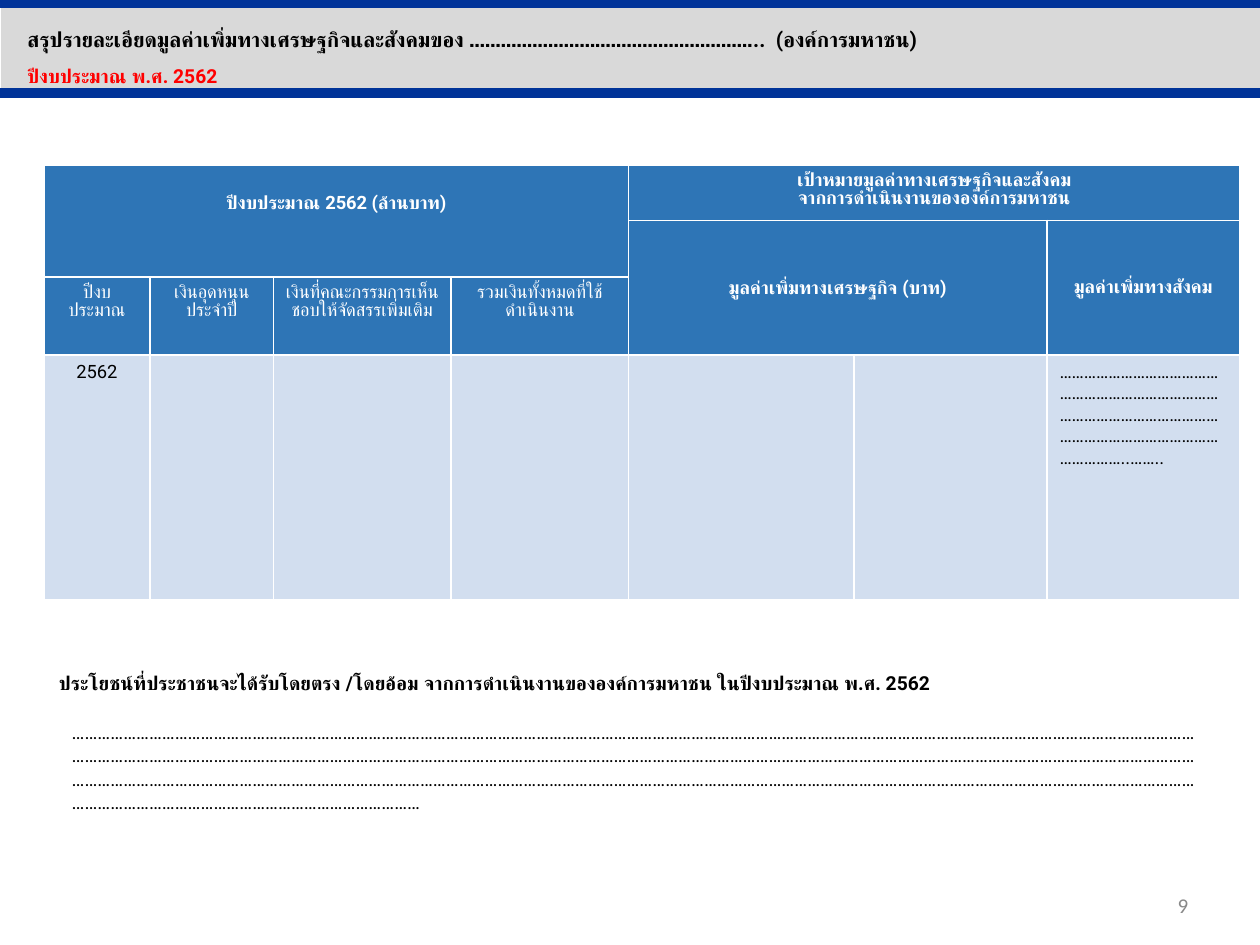
from dataclasses import dataclass
from typing import Optional

from pptx import Presentation
from pptx.dml.color import RGBColor
from pptx.enum.shapes import MSO_CONNECTOR, MSO_SHAPE
from pptx.enum.text import MSO_ANCHOR, MSO_AUTO_SIZE, PP_ALIGN
from pptx.oxml.xmlchemy import OxmlElement
from pptx.util import Inches, Pt


@dataclass(frozen=True)
class Theme:
    font: str = "Roboto"
    number_font: str = "Calibri"
    black: str = "000000"
    white: str = "FFFFFF"
    red: str = "FF0000"
    gray: str = "898989"
    band: str = "D9D9D9"
    rule: str = "003399"
    header: str = "2E75B6"
    body: str = "D2DEEF"
    title_size: float = 12
    text_size: float = 11
    table_size: float = 10.5


THEME = Theme()


@dataclass(frozen=True)
class Label:
    text: str
    left: float
    top: float
    width: float
    height: float
    size: float = THEME.text_size
    color: str = THEME.black
    bold: bool = False
    wrap: bool = False
    grow: bool = True
    font: str = THEME.font
    align: Optional[PP_ALIGN] = None
    anchor: MSO_ANCHOR = MSO_ANCHOR.TOP


@dataclass(frozen=True)
class Entry:
    row: int
    column: int
    text: str
    rows: int = 1
    columns: int = 1
    bold: bool = False
    color: str = THEME.white
    align: Optional[PP_ALIGN] = PP_ALIGN.CENTER
    anchor: MSO_ANCHOR = MSO_ANCHOR.TOP
    margin_top: float = 0.05


LABELS = [
    Label("สรุปรายละเอียดมูลค่าเพิ่มทางเศรษฐกิจและสังคมของ "
          "………………………………………………..  (องค์การมหาชน)",
          0.12, 0.16, 8.76, 0.3, size=THEME.title_size, bold=True),
    Label("ประโยชน์ที่ประชาชนจะได้รับโดยตรง /โดยอ้อม "
          "จากการดำเนินงานขององค์การมหาชน ในปีงบประมาณ พ.ศ. 2562",
          0.37, 5.28, 8.03, 0.29, bold=True),
    Label("…" * 288, 0.47, 5.67, 9.21, 0.84, wrap=True),
    Label("ปีงบประมาณ พ.ศ. 2562", 0.12, 0.46, 1.96, 0.29,
          color=THEME.red, bold=True),
    Label("9", 7.28, 6.98, 2.25, 0.4, size=THEME.title_size, color=THEME.gray,
          wrap=True, grow=False, font=THEME.number_font,
          align=PP_ALIGN.RIGHT, anchor=MSO_ANCHOR.MIDDLE),
]

COLUMN_WIDTHS = [0.84, 0.98, 1.41, 1.41, 1.79, 1.53, 1.53]
ROW_HEIGHTS = [0.44, 0.45, 0.62, 1.94]
HEADER_ROWS = 3

ENTRIES = [
    Entry(0, 0, "ปีงบประมาณ 2562 (ล้านบาท)", 2, 4, bold=True, margin_top=0.22),
    Entry(0, 4, "เป้าหมายมูลค่าทางเศรษฐกิจและสังคม\nจากการดำเนินงานขององค์การมหาชน",
          1, 3, bold=True),
    Entry(1, 4, "มูลค่าเพิ่มทางเศรษฐกิจ (บาท)", 2, 2, bold=True,
          anchor=MSO_ANCHOR.MIDDLE),
    Entry(1, 6, "มูลค่าเพิ่มทางสังคม", 2, bold=True, anchor=MSO_ANCHOR.MIDDLE),
    Entry(2, 0, "ปีงบ ประมาณ"),
    Entry(2, 1, "เงินอุดหนุนประจำปี"),
    Entry(2, 2, "เงินที่คณะกรรมการเห็นชอบให้จัดสรรเพิ่มเติม"),
    Entry(2, 3, "รวมเงินทั้งหมดที่ใช้ดำเนินงาน"),
    Entry(3, 0, "2562", color=THEME.black),
    Entry(3, 6, "…" * 57 + "..……..", color=THEME.black, align=None),
]


def rgb(color: str) -> RGBColor:
    return RGBColor.from_string(color)


def style_text(frame, size: float, color: str, bold: bool, font: str, align) -> None:
    for para in frame.paragraphs:
        para.alignment = align
        for span in para.runs:
            span.font.size = Pt(size)
            span.font.name = font
            span.font.bold = bold
            span.font.color.rgb = rgb(color)


def add_label(slide, label: Label) -> None:
    box = slide.shapes.add_textbox(Inches(label.left), Inches(label.top),
                                   Inches(label.width), Inches(label.height))
    frame = box.text_frame
    frame.text = label.text
    frame.word_wrap = label.wrap
    frame.auto_size = (MSO_AUTO_SIZE.SHAPE_TO_FIT_TEXT if label.grow
                       else MSO_AUTO_SIZE.NONE)
    frame.vertical_anchor = label.anchor
    style_text(frame, label.size, label.color, label.bold, label.font, label.align)


def add_rule(slide, top: float) -> None:
    line = slide.shapes.add_connector(MSO_CONNECTOR.STRAIGHT, Inches(0), Inches(top),
                                      Inches(10.01), Inches(top))
    line.line.color.rgb = rgb(THEME.rule)
    line.line.width = Pt(6)
    line._element.spPr.append(OxmlElement("a:effectLst"))


def add_borders(cell) -> None:
    properties = cell._tc.get_or_add_tcPr()
    for position, side in enumerate(("lnL", "lnR", "lnT", "lnB")):
        border = OxmlElement(f"a:{side}")
        border.set("w", str(Pt(1)))
        fill = OxmlElement("a:solidFill")
        color = OxmlElement("a:srgbClr")
        color.set("val", THEME.white)
        fill.append(color)
        border.append(fill)
        properties.insert(position, border)


def add_value_table(slide) -> None:
    table = slide.shapes.add_table(
        len(ROW_HEIGHTS), len(COLUMN_WIDTHS), Inches(0.35), Inches(1.31),
        Inches(sum(COLUMN_WIDTHS)), Inches(sum(ROW_HEIGHTS))).table
    for column, width in zip(table.columns, COLUMN_WIDTHS):
        column.width = Inches(width)
    for index, (row, height) in enumerate(zip(table.rows, ROW_HEIGHTS)):
        row.height = Inches(height)
        for cell in row.cells:
            cell.fill.solid()
            cell.fill.fore_color.rgb = rgb(
                THEME.header if index < HEADER_ROWS else THEME.body)
            add_borders(cell)

    for entry in ENTRIES:
        cell = table.cell(entry.row, entry.column)
        if entry.rows * entry.columns > 1:
            cell.merge(table.cell(entry.row + entry.rows - 1,
                                  entry.column + entry.columns - 1))
        cell.text_frame.text = entry.text
        cell.vertical_anchor = entry.anchor
        cell.margin_top = Inches(entry.margin_top)
        style_text(cell.text_frame, THEME.table_size, entry.color, entry.bold,
                   THEME.font, entry.align)


def main() -> None:
    deck = Presentation()
    deck.slide_width, deck.slide_height = Inches(10), Inches(7.5)
    page = deck.slides.add_slide(deck.slide_layouts[6])

    # Title band between two rules
    band = page.shapes.add_shape(MSO_SHAPE.RECTANGLE, Inches(0.01), Inches(0.05),
                                 Inches(9.99), Inches(0.68))
    band.shadow.inherit = False
    band.fill.solid()
    band.fill.fore_color.rgb = rgb(THEME.band)
    band.line.fill.background()
    for top in (0.74, 0.02):
        add_rule(page, top)

    # Budget and value table
    add_value_table(page)

    # Titles, benefits and page number
    for label in LABELS:
        add_label(page, label)

    deck.save("out.pptx")


if __name__ == "__main__":
    main()
